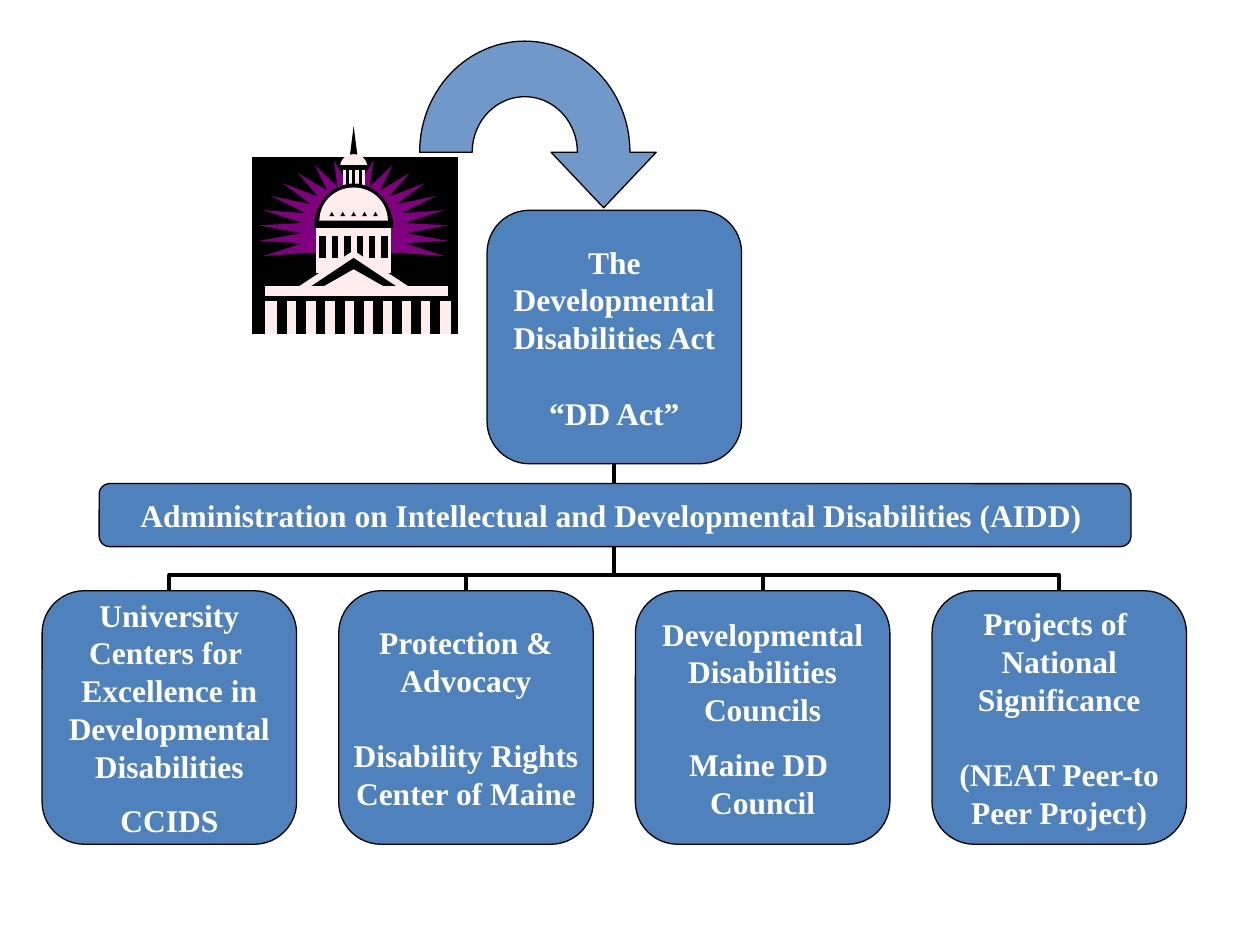
import math
import lxml.etree
import pptx
import pptx.dml.color
import pptx.enum.shapes
import pptx.enum.text
import pptx.oxml.ns
import pptx.util

Cm = pptx.util.Cm
Pt = pptx.util.Pt
qn = pptx.oxml.ns.qn
Kind = pptx.enum.shapes.MSO_SHAPE

THEME = {
    "blue": "4F81BD", "black": "000000", "white": "FFFFFF",
    "plum": "800080", "blush": "FFEDED",
    "edge": 0.75, "link": 2.25, "wide": 21.6, "tight": 9.6,
    "font": {"name": "Times New Roman", "size": Pt(18), "bold": True},
    "frame": {"margin_left": 0, "margin_right": 0, "margin_top": 0,
              "margin_bottom": 0, "word_wrap": False,
              "vertical_anchor": pptx.enum.text.MSO_ANCHOR.MIDDLE},
}

CARDS = [
    ("tight", [["University", "Centers for ", "Excellence in",
                "Developmental", "Disabilities"], ["CCIDS"]]),
    ("wide", [["Protection &", "Advocacy"],
              ["Disability Rights", "Center of Maine"]]),
    ("tight", [["Developmental", "Disabilities", "Councils"],
               ["Maine DD ", "Council"]]),
    ("wide", [["Projects of ", "National", "Significance"],
              ["(NEAT Peer-to", "Peer Project)"]]),
]
ACT = [["The", "Developmental", "Disabilities Act"], ["“DD Act”"]]
BAR = [["Administration on Intellectual and Developmental Disabilities (AIDD) "]]


def tint(name):
    return pptx.dml.color.RGBColor.from_string(THEME[name])


def apply(thing, values):
    for key, value in values.items():
        setattr(thing, key, value)


def arc(x, y, wide, high, turns):
    return [(x + wide * math.cos(math.radians(turn)),
             y - high * math.sin(math.radians(turn))) for turn in turns]


def rect(left, top, right, base):
    return [(left, top), (right, top), (right, base), (left, base)]


def peak(x, top, base, half):
    return [(x - half, base), (x, top), (x + half, base)]


def star(x, y, outer, inner, first, last, step):
    points = []
    for turn in range(first, last, 2 * step):
        points += arc(x, y, *inner, [turn]) + arc(x, y, *outer, [turn + step])
    return points + arc(x, y, *inner, [last])


class Chart:
    def __init__(self, slide):
        self.slide = slide

    def paint(self, shape, fill, edge):
        shape.shadow.inherit = False
        shape.fill.solid()
        shape.fill.fore_color.rgb = tint(fill)
        if edge:
            shape.line.color.rgb = tint("black")
            shape.line.width = Pt(THEME["edge"])
        else:
            shape.line.fill.background()

    def box(self, left, top, width, height, blocks, gap="wide"):
        shape = self.slide.shapes.add_shape(
            Kind.ROUNDED_RECTANGLE, Cm(left), Cm(top), Cm(width), Cm(height))
        self.paint(shape, "blue", True)
        frame = shape.text_frame
        apply(frame, THEME["frame"])
        first = True
        for block in blocks:
            for row, words in enumerate(block):
                para = frame.paragraphs[0] if first else frame.add_paragraph()
                para.text = words
                para.alignment = pptx.enum.text.PP_ALIGN.CENTER
                if row == 0 and not first:
                    para.space_before = Pt(THEME[gap])
                apply(para.font, THEME["font"])
                para.font.color.rgb = tint("white")
                first = False

    def link(self, x, y, hub, base):
        line = self.slide.shapes.add_connector(
            pptx.enum.shapes.MSO_CONNECTOR.ELBOW, 0, 0, 0, 0)
        rise, run = y - base, abs(x - hub)
        apply(line, {"left": Cm((x + hub - rise) / 2), "top": Cm((y + base - run) / 2),
                     "width": Cm(rise), "height": Cm(run)})
        props = line._element.spPr
        frame = props.find(qn("a:xfrm"))
        frame.set("rot", str((270 if x < hub else 90) * 60000))
        if x > hub:
            frame.set("flipH", "1")
        guides = props.find(qn("a:prstGeom")).find(qn("a:avLst"))
        lxml.etree.SubElement(guides, qn("a:gd"), name="adj1", fmla="val 12400")
        line.line.color.rgb = tint("black")
        line.line.width = Pt(THEME["link"])
        lxml.etree.SubElement(props, qn("a:effectLst"))

    def form(self, shapes, fill, points, edge=False):
        grid = [(round(x * 1000), round(y * 1000)) for x, y in points]
        pen = shapes.build_freeform(*grid[0], scale=Cm(0.001))
        pen.add_line_segments(grid[1:], close=True)
        shape = pen.convert_to_shape()
        self.paint(shape, fill, edge)
        return shape

    def dome(self):
        shapes = self.slide.shapes.add_group_shape().shapes
        left, top, right, base = 5.08, 3.16, 9.23, 6.73
        mid = 7.13
        half = range(0, 181, 6)

        def draw(fill, points):
            self.form(shapes, fill, points)

        def slots(first, pitch, count, width, high, low):
            for step in range(count):
                x = first + pitch * step
                draw("black", rect(x, high, x + width, low))

        draw("black", rect(left, top, right, base))
        draw("plum", star(mid, 4.7, (1.92, 1.5), (1.05, 0.98), -24, 204, 6))

        draw("black", peak(mid, 2.54, 3.25, 0.09))
        draw("blush", arc(mid, 3.35, 0.27, 0.24, half))
        draw("black", rect(mid - 0.27, 3.33, mid + 0.27, 3.42))
        draw("blush", rect(mid - 0.22, 3.42, mid + 0.22, 3.85))
        slots(mid - 0.16, 0.13, 3, 0.06, 3.42, 3.74)

        draw("black", arc(mid, 4.6, 0.8, 0.9, half))
        draw("blush", arc(mid, 4.45, 0.69, 0.67, half))
        for step in range(-2, 3):
            draw("black", peak(mid + 0.22 * step, 4.27, 4.36, 0.05))
        draw("blush", rect(mid - 0.75, 4.6, mid + 0.75, 5.5))
        slots(mid - 0.69, 0.25, 6, 0.13, 4.75, 5.2)

        draw("blush", peak(mid, 5.05, 5.77, 1.1))
        draw("black", peak(mid, 5.2, 5.84, 0.96))
        draw("blush", peak(mid, 5.43, 5.84, 0.72))
        draw("blush", rect(5.34, 5.77, 9.04, 5.97))
        draw("blush", rect(5.34, 6.07, 9.1, base))
        slots(5.59, 0.386, 9, 0.2, 6.07, base)

    def arrow(self):
        x, y, tip = 10.58, 3.07, 12.17
        points = (arc(x, y, 1.06, 1.12, range(0, 181, 3))
                  + arc(x, y, 2.12, 2.24, range(180, -1, -3))
                  + [(tip + 1.06, y), (tip, 4.19), (tip - 1.06, y)])
        shape = self.form(self.slide.shapes, "blue", points, True)
        shade = shape._element.spPr.find(qn("a:solidFill"))[0]
        lxml.etree.SubElement(shade, qn("a:alpha"), val="81000")


def main():
    deck = pptx.Presentation()
    deck.slide_width, deck.slide_height = Cm(25.4), Cm(19.05)
    chart = Chart(deck.slides.add_slide(deck.slide_layouts[6]))
    wide, high, left, pitch, top = 5.13, 5.11, 0.85, 5.98, 11.91
    spots = [left + pitch * step for step in range(len(CARDS))]
    hub = (spots[0] + spots[-1] + wide) / 2
    act = 4.24
    for spot in spots:
        chart.link(spot + wide / 2, top, hub, act + high)
    chart.box(hub - wide / 2, act, wide, high, ACT)
    for spot, (gap, blocks) in zip(spots, CARDS):
        chart.box(spot, top, wide, high, blocks, gap)
    chart.box(2, 9.75, 20.8, 1.27, BAR)
    chart.dome()
    chart.arrow()
    deck.save("out.pptx")


if __name__ == "__main__":
    main()
